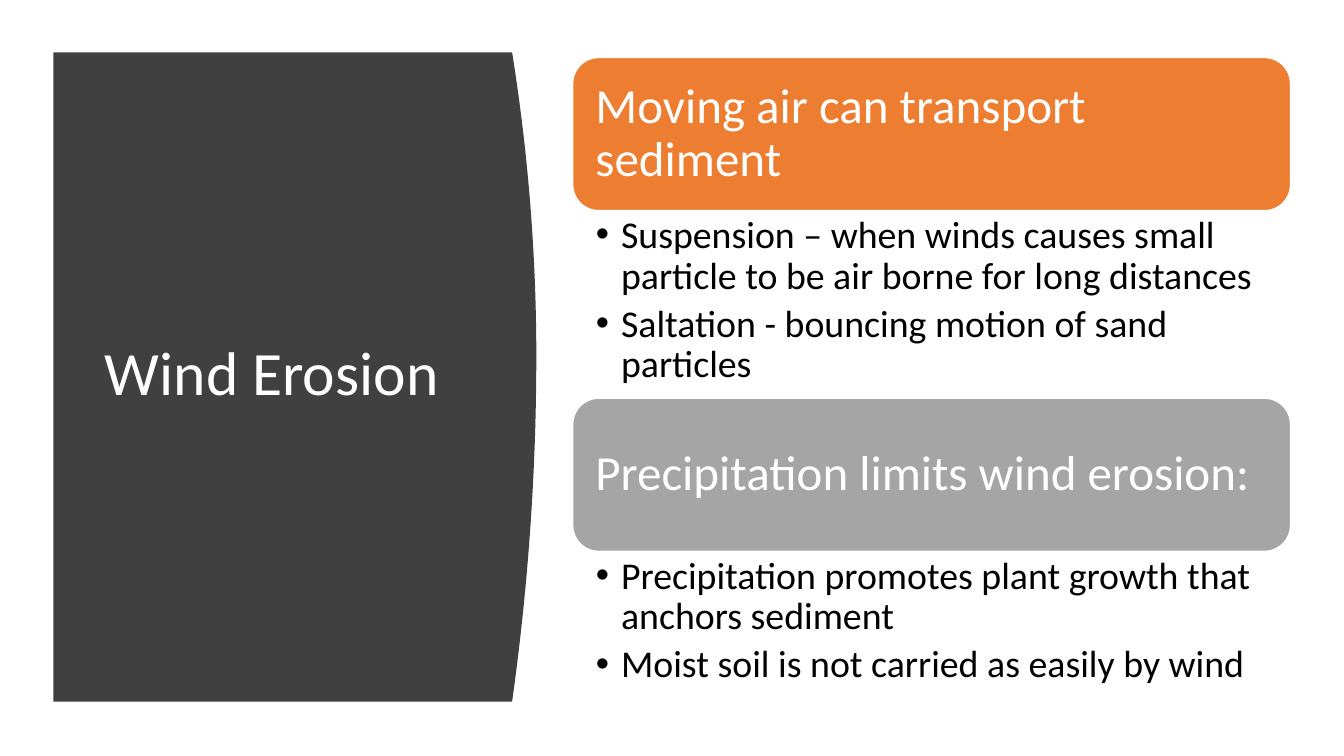
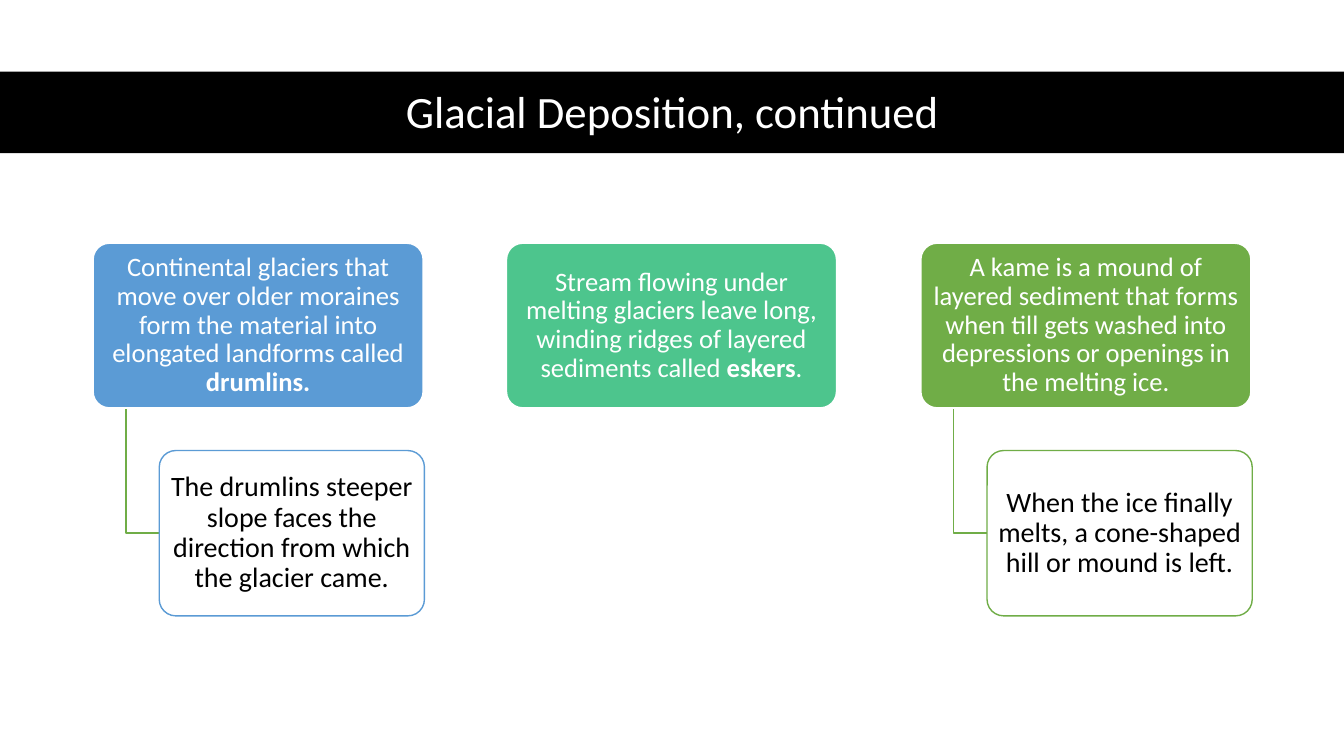
from lxml.etree import SubElement
from pptx import Presentation
from pptx.dml.color import RGBColor
from pptx.enum.shapes import MSO_SHAPE
from pptx.enum.text import MSO_ANCHOR, MSO_AUTO_SIZE, PP_ALIGN
from pptx.oxml.ns import qn
from pptx.util import Pt

PX = 9144  # EMU in one px, 100 px to the inch
FONT = "Calibri"
TITLE_ONLY = 5
COLORS = {
    "white": "FFFFFF",
    "black": "000000",
    "charcoal": "404040",
    "orange": "ED7D31",
    "gray": "A5A5A5",
    "blue": "5B9BD5",
    "teal": "4DC58D",
    "green": "70AD47",
}


def rgb(name):
    return RGBColor.from_string(COLORS[name])


def emu(box):
    return [length * PX for length in box]


# Shared text and shape styles
def set_frame(frame, insets, anchor):
    frame.word_wrap = True
    frame.auto_size = MSO_AUTO_SIZE.NONE
    frame.vertical_anchor = anchor
    (frame.margin_left, frame.margin_top,
     frame.margin_right, frame.margin_bottom) = emu(insets)


def add_runs(para, runs, size, color, align):
    """Write (text, bold) runs into one paragraph."""
    para.alignment = align
    para.line_spacing = 0.9
    for text, bold in runs:
        span = para.add_run()
        span.text = text
        span.font.name = FONT
        span.font.size = Pt(size)
        span.font.bold = bold
        span.font.color.rgb = rgb(color)


def set_bullet(para):
    para.level = 1
    para.space_after = Pt(5)
    props = para._p.get_or_add_pPr()
    props.set("marL", str(25 * PX))
    props.set("indent", str(-25 * PX))
    SubElement(props, qn("a:buFont")).set("typeface", "Arial")
    SubElement(props, qn("a:buChar")).set("char", "•")


def paint(shape, fill=None, line=None, width=1):
    shape.shadow.inherit = False
    if fill:
        shape.fill.solid()
        shape.fill.fore_color.rgb = rgb(fill)
    else:
        shape.fill.background()
    if line:
        shape.line.color.rgb = rgb(line)
        shape.line.width = Pt(width)
    else:
        shape.line.fill.background()


def add_rounded(page, box, radius, fill, line, width=1):
    shape = page.shapes.add_shape(MSO_SHAPE.ROUNDED_RECTANGLE, *emu(box))
    shape.adjustments[0] = radius
    paint(shape, fill, line, width)
    return shape


def place_title(page, backdrop, box, text, size, align):
    """Set the title in its box, in front of its backdrop."""
    title = page.shapes.title
    title.left, title.top, title.width, title.height = emu(box)
    set_frame(title.text_frame, (10, 5, 10, 5), MSO_ANCHOR.MIDDLE)
    add_runs(title.text_frame.paragraphs[0], [(text, False)], size, "white", align)
    title.element.addprevious(backdrop.element)


# Wind slide
def add_curved_panel(page, box, bulge, apex):
    """Panel whose right edge is a parabola, widest at height apex."""
    left, top, width, height = emu(box)
    right, bottom, peak = left + width, top + height, apex * PX
    edge = []
    steps = 40
    for step in range(steps + 1):
        y = top + height * step / steps
        reach = peak - top if y < peak else bottom - peak
        edge.append((right - bulge * PX * ((y - peak) / reach) ** 2, y))
    builder = page.shapes.build_freeform(left, top)
    builder.add_line_segments(edge + [(left, bottom)], close=True)
    panel = builder.convert_to_shape()
    paint(panel, "charcoal")
    return panel


def add_topic(page, box, heading_height, heading, color, points):
    """Coloured heading with its bullet list below."""
    left, top, width, height = box
    bar = add_rounded(page, (left, top, width, heading_height), 0.17, color, "white")
    set_frame(bar.text_frame, (15, 15, 15, 15), MSO_ANCHOR.MIDDLE)
    add_runs(bar.text_frame.paragraphs[0], [(heading, False)], 35, "white", PP_ALIGN.LEFT)

    body = page.shapes.add_textbox(
        *emu((left, top + heading_height, width, height - heading_height)))
    frame = body.text_frame
    set_frame(frame, (23, 5, 27, 5), MSO_ANCHOR.TOP)
    for index, point in enumerate(points):
        para = frame.add_paragraph() if index else frame.paragraphs[0]
        add_runs(para, [(point, False)], 27, "black", PP_ALIGN.LEFT)
        set_bullet(para)


def build_wind_slide(deck):
    page = deck.slides.add_slide(deck.slide_layouts[TITLE_ONLY])
    panel = add_curved_panel(page, (53, 52, 455 + 24, 644), 24, 353)
    place_title(page, panel, (94, 111, 374, 524), "Wind Erosion", 44, PP_ALIGN.LEFT)
    topics = [
        ("Moving air can transport sediment", "orange", 338,
         ["Suspension – when winds causes small particle to be air borne for long distances",
          "Saltation - bouncing motion of sand particles"]),
        ("Precipitation limits wind erosion:", "gray", 295,
         ["Precipitation promotes plant growth that anchors sediment",
          "Moist soil is not carried as easily by wind"]),
    ]
    top = 57
    for heading, color, height, points in topics:
        add_topic(page, (568, top, 712, height), 152, heading, color, points)
        top += height


# Glacier slide
def add_card(page, box, runs, size, text_color, fill, line, width):
    card = add_rounded(page, box, 0.1, fill, line, width)
    set_frame(card.text_frame, (4, 3, 4, 3), MSO_ANCHOR.MIDDLE)
    add_runs(card.text_frame.paragraphs[0], runs, size, text_color, PP_ALIGN.CENTER)
    return card


def add_landform(page, box, runs, color, detail):
    """Filled card, with an outlined detail card hung below it if there is one."""
    left, top, width, height = box
    add_card(page, box, runs, 19, "white", color, "white", 1.5)
    if not detail:
        return
    stem, indent, drop = left + 33, left + 66, top + 206
    middle = drop + height // 2
    builder = page.shapes.build_freeform(stem, top + height + 1, scale=PX)
    builder.add_line_segments([(stem, middle), (indent, middle)], close=False)
    paint(builder.convert_to_shape(), line="green")

    card = add_card(page, (indent, drop, width - 65, height), [(detail, False)],
                    20, "black", "white", color, 1)
    tint = card.element.spPr.find(qn("a:solidFill"))[0]
    SubElement(tint, qn("a:alpha")).set("val", "90000")


def build_glacier_slide(deck):
    page = deck.slides.add_slide(deck.slide_layouts[TITLE_ONLY])
    band = page.shapes.add_shape(MSO_SHAPE.RECTANGLE, *emu((0, 71, 1333, 81)))
    paint(band, "black")
    place_title(page, band, (92, 74, 1150, 78), "Glacial Deposition, continued",
                32, PP_ALIGN.CENTER)
    landforms = [
        ([("Continental glaciers that move over older moraines form the material "
           "into elongated landforms called ", False), ("drumlins.", True)], "blue",
         "The drumlins steeper slope faces the direction from which the glacier came."),
        ([("Stream flowing under melting glaciers leave long, winding ridges of "
           "layered sediments called ", False), ("eskers", True), (".", False)],
         "teal", None),
        ([("A kame is a mound of layered sediment that forms when till gets washed "
           "into depressions or openings in the melting ice.", False)], "green",
         "When the ice finally melts, a cone-shaped hill or mound is left."),
    ]
    left, row_width, card_width = 92, 1149, 328
    for index, (runs, color, detail) in enumerate(landforms):
        offset = (row_width - card_width) * index // (len(landforms) - 1)
        add_landform(page, (left + offset, 241, card_width, 164), runs, color, detail)


def main():
    deck = Presentation()
    deck.slide_width, deck.slide_height = emu((1333, 750))
    build_wind_slide(deck)
    build_glacier_slide(deck)
    deck.save("out.pptx")


if __name__ == "__main__":
    main()
